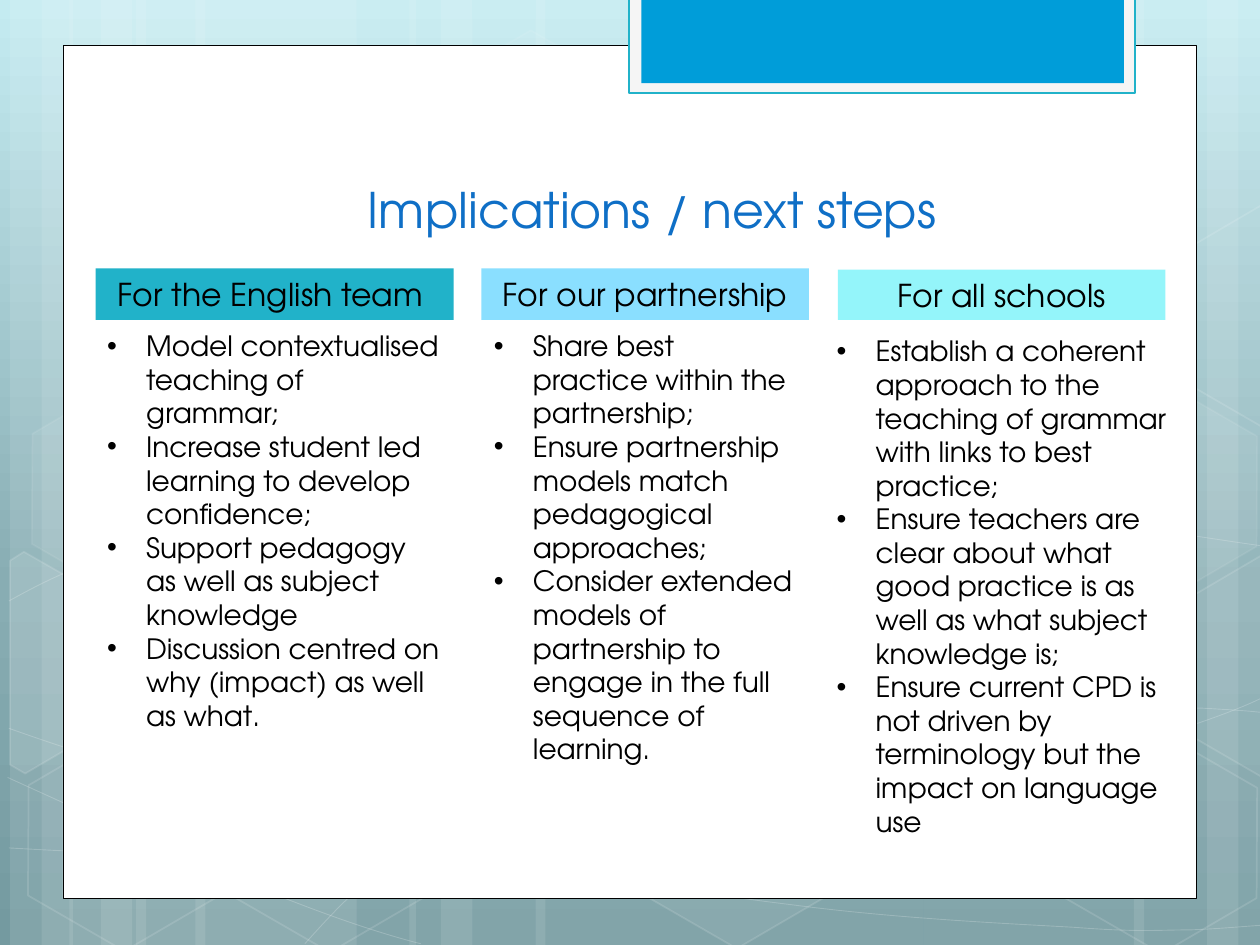
import pptx
import pptx.util
import pptx.dml.color
import pptx.enum.shapes
import pptx.enum.text
import pptx.oxml.ns
import lxml.etree
import copy

Inches = pptx.util.Inches
Pt = pptx.util.Pt
qn = pptx.oxml.ns.qn
MSO_SHAPE = pptx.enum.shapes.MSO_SHAPE
ALIGN = pptx.enum.text.PP_ALIGN
ANCHOR = pptx.enum.text.MSO_ANCHOR
FONT = "TeX Gyre Adventor"
WHITE, BLACK = "FFFFFF", "000000"

SKY = [(0, "C4EBF1"), (0.62, "88ADB3"), (1, "749AA0")]

# Left edge and width of the full-height light bands
BANDS = [(1.08, 1.75), (0.08, 0.5), (0.33, 0.83), (1.55, 1.75), (0.55, 0.5), (0.8, 0.83),
         (7.33, 1.75), (9.58, 0.5), (9, 0.83), (4.25, 3.08), (3.25, 0.5), (3.5, 0.83)]

# Start point, then three Bezier points per segment
WAVES = [
    [(0.07, 6.73), (0.61, 6.76), (1.15, 6.79), (1.9, 6.78), (2.65, 6.77), (3.58, 6.75),
     (4.58, 6.65), (5.58, 6.55), (7, 6.36), (7.92, 6.17), (8.83, 5.98), (9.77, 5.68), (10.07, 5.51)],
    [(0.07, 4.77), (0.36, 4.61), (0.65, 4.46), (1.21, 4.31), (1.78, 4.16), (2.59, 3.94),
     (3.47, 3.87), (4.36, 3.8), (5.44, 3.79), (6.54, 3.87), (7.64, 3.95), (9.47, 4.26), (10.07, 4.34)],
    [(0.06, 6.17), (1.27, 6.72), (2.47, 7.27), (3.34, 7.49)],
    [(0.07, 5.78), (0.38, 5.89), (0.7, 6), (1.28, 6.16), (1.86, 6.31), (2.73, 6.56),
     (3.57, 6.73), (4.4, 6.9), (5.45, 7.08), (6.28, 7.18), (7.11, 7.29), (8, 7.33), (8.53, 7.36),
     (9.05, 7.4), (9.19, 7.38), (9.45, 7.38), (9.71, 7.37), (9.89, 7.35), (10.07, 7.34)],
    [(2.42, 7.49), (2.6, 7.29), (2.78, 7.09), (3.02, 6.91), (3.26, 6.73), (3.6, 6.53),
     (3.88, 6.39), (4.16, 6.25), (4.33, 6.19), (4.7, 6.09), (5.06, 5.99), (5.73, 5.85), (6.08, 5.78),
     (6.44, 5.71), (6.49, 5.71), (6.8, 5.69), (7.11, 5.66), (7.6, 5.63), (7.94, 5.62),
     (8.29, 5.61), (8.86, 5.62), (8.86, 5.62), (9.08, 5.62), (9.31, 5.62), (9.53, 5.62),
     (9.71, 5.63), (9.88, 5.64), (9.97, 5.65), (10.06, 5.66), (10.03, 5.65), (10.06, 5.66)],
]

# Left, top, fill opacity (None: outline only), line opacity
HEXAGONS = [(3.34, 0.36, 4, 8), (4.97, 5.89, 6, 12), (0.11, 5.91, None, 12),
            (0.14, 3.12, 7, 8), (1.74, 5.92, None, 12), (7.53, 4.53, 10, 12),
            (8.34, 5.93, None, 12), (8.34, 3.14, 7, 8)]

# Corners and fill opacity of the hexagons cut off by the slide edge
CUT_HEXAGONS = [
    ([(0.08, 4.45), (0.19, 4.38), (0.96, 4.82), (0.95, 5.7), (0.2, 6.14), (0.08, 6.07)], 10),
    ([(9.26, 4.85), (10.01, 4.41), (10.09, 4.46), (10.09, 6.13), (10.02, 6.17), (9.26, 5.73)], 4),
    ([(9.26, 2.07), (10.01, 1.63), (10.1, 1.68), (10.09, 3.35), (10.02, 3.39), (9.26, 2.95)], None),
]

# Heading, its box and colour; list placeholder index, its box and items
COLUMNS = [
    ("For the English team ", (0.76, 2.13, 2.84, 0.41), "21B2C9", 1, (0.75, 2.56, 2.86, 4.68),
     ["Model contextualised teaching of grammar;",
      "Increase student led learning to develop confidence;",
      "Support pedagogy as well as subject knowledge",
      "Discussion centred on why (impact) as well as what."]),
    ("For our partnership", (3.82, 2.13, 2.6, 0.41), "8ADFFF", 2, (3.82, 2.56, 2.6, 4.94),
     ["Share best practice within the partnership;",
      "Ensure partnership models match pedagogical approaches;",
      "Consider extended models of partnership to engage in the full sequence of learning."]),
    ("For all schools", (6.65, 2.14, 2.6, 0.4), "94F5FA", 4, (6.54, 2.6, 2.83, 4.14),
     ["Establish a coherent approach to the teaching of grammar with links to best practice;",
      "Ensure teachers are clear about what good practice is as well as what subject knowledge is;",
      "Ensure current CPD is not driven by terminology but the impact on language use"]),
]


def rgb(code):
    return pptx.dml.color.RGBColor.from_string(code)


def set_opacity(shape, route, percent):
    tint = shape._element.spPr.find(route + qn("a:solidFill") + "/" + qn("a:srgbClr"))
    lxml.etree.SubElement(tint, qn("a:alpha")).set("val", str(percent * 1000))


def paint(shape, fill=None, fill_opacity=100, line=None, width=1, line_opacity=100):
    shape.shadow.inherit = False
    if fill:
        shape.fill.solid()
        shape.fill.fore_color.rgb = rgb(fill)
        if fill_opacity < 100:
            set_opacity(shape, "", fill_opacity)
    else:
        shape.fill.background()
    if line:
        shape.line.color.rgb = rgb(line)
        shape.line.width = Pt(width)
        if line_opacity < 100:
            set_opacity(shape, qn("a:ln") + "/", line_opacity)
    else:
        shape.line.fill.background()


def paint_hexagon(shape, fill_opacity, line_opacity):
    paint(shape, WHITE if fill_opacity else None, fill_opacity or 100, WHITE, 1, line_opacity)


def add_preset(slide, kind, box):
    return slide.shapes.add_shape(kind, *map(Inches, box))


def add_panel(slide, box, **look):
    panel = add_preset(slide, MSO_SHAPE.RECTANGLE, box)
    paint(panel, **look)
    return panel


def add_outline(slide, points, closed):
    corners = [(Inches(x), Inches(y)) for x, y in points]
    builder = slide.shapes.build_freeform(*corners[0])
    builder.add_line_segments(corners[1:], close=closed)
    return builder.convert_to_shape()


def add_wave(slide, knots):
    wave = add_outline(slide, knots, False)
    # Merge every three straight steps into one Bezier segment
    steps = list(wave._element.iter(qn("a:lnTo")))
    for first in range(0, len(steps), 3):
        curve = lxml.etree.Element(qn("a:cubicBezTo"))
        steps[first].addprevious(curve)
        for step in steps[first:first + 3]:
            curve.append(step[0])
            step.getparent().remove(step)
    paint(wave, line=WHITE, width=0.5, line_opacity=20)


def write(paragraph, text, size, color, align):
    paragraph.alignment = align
    paragraph.line_spacing = 1.0
    paragraph.space_before = paragraph.space_after = Pt(0)
    run = paragraph.add_run()
    run.text = text
    run.font.name, run.font.size, run.font.bold = FONT, Pt(size), False
    run.font.color.rgb = rgb(color)


def prepare_frame(shape, anchor):
    frame = shape.text_frame
    frame.word_wrap = True
    frame.auto_size = pptx.enum.text.MSO_AUTO_SIZE.NONE
    frame.vertical_anchor = anchor
    return frame


def move_to_front(slide, shape, box):
    shape.left, shape.top, shape.width, shape.height = map(Inches, box)
    slide.shapes._spTree.append(shape._element)


def set_bullet(paragraph):
    props = paragraph._p.get_or_add_pPr()
    props.set("marL", str(Inches(0.31)))
    props.set("indent", str(-Inches(0.31)))
    lxml.etree.SubElement(props, qn("a:buFont")).set("typeface", "Arial")
    lxml.etree.SubElement(props, qn("a:buChar")).set("char", "•")


def fill_list(slide, holder, box, items):
    move_to_front(slide, holder, box)
    frame = prepare_frame(holder, ANCHOR.TOP)
    for i, item in enumerate(items):
        paragraph = frame.add_paragraph() if i else frame.paragraphs[0]
        write(paragraph, item, 16, BLACK, ALIGN.LEFT)
        set_bullet(paragraph)


def draw_background(slide):
    sky = slide.background.fill
    sky.gradient()
    sky.gradient_angle = 270
    stops = slide._element.find(".//" + qn("a:gsLst"))
    stops.append(copy.deepcopy(stops[-1]))
    for stop, (position, color) in zip(sky.gradient_stops, SKY):
        stop.position = position
        stop.color.rgb = rgb(color)
    for left, width in BANDS:
        add_panel(slide, (left, 0, width, 7.5), fill=WHITE, fill_opacity=10)
    for knots in WAVES:
        add_wave(slide, knots)
    for left, top, fill_opacity, line_opacity in HEXAGONS:
        hexagon = add_preset(slide, MSO_SHAPE.HEXAGON, (left, top, 1.75, 1.52))
        hexagon.adjustments[0] = 0.285
        hexagon.rotation = 30
        paint_hexagon(hexagon, fill_opacity, line_opacity)
    for corners, fill_opacity in CUT_HEXAGONS:
        paint_hexagon(add_outline(slide, corners, True), fill_opacity, 12)


def main():
    deck = pptx.Presentation()
    deck.slide_width, deck.slide_height = Inches(10), Inches(7.5)
    slide = deck.slides.add_slide(deck.slide_layouts.get_by_name("Comparison"))
    holders = {holder.placeholder_format.idx: holder for holder in slide.placeholders}
    draw_background(slide)

    # White page with the blue tab at its top
    add_panel(slide, (0.5, 0.36, 9, 6.77), fill=WHITE, line=BLACK, width=0.5)
    add_panel(slide, (4.99, -0.02, 4.02, 0.76), fill="F5F5F5", line="21B2C9", width=1.25)
    add_panel(slide, (5.09, -0.02, 3.83, 0.68), fill="009DD9")

    # Title
    move_to_front(slide, holders[0], (0.9, 1.07, 8.66, 0.87))
    title = prepare_frame(holders[0], ANCHOR.BOTTOM)
    write(title.paragraphs[0], "Implications / next steps ", 28, "0F6FC6", ALIGN.CENTER)

    # Three columns, each a heading over a list
    for heading, heading_box, color, idx, list_box, items in COLUMNS:
        bar = add_panel(slide, heading_box, fill=color)
        frame = prepare_frame(bar, ANCHOR.MIDDLE)
        write(frame.paragraphs[0], heading, 18, BLACK, ALIGN.CENTER)
        fill_list(slide, holders[idx], list_box, items)

    # Placeholder without content
    slide.shapes._spTree.remove(holders[3]._element)
    deck.save("out.pptx")


if __name__ == "__main__":
    main()
